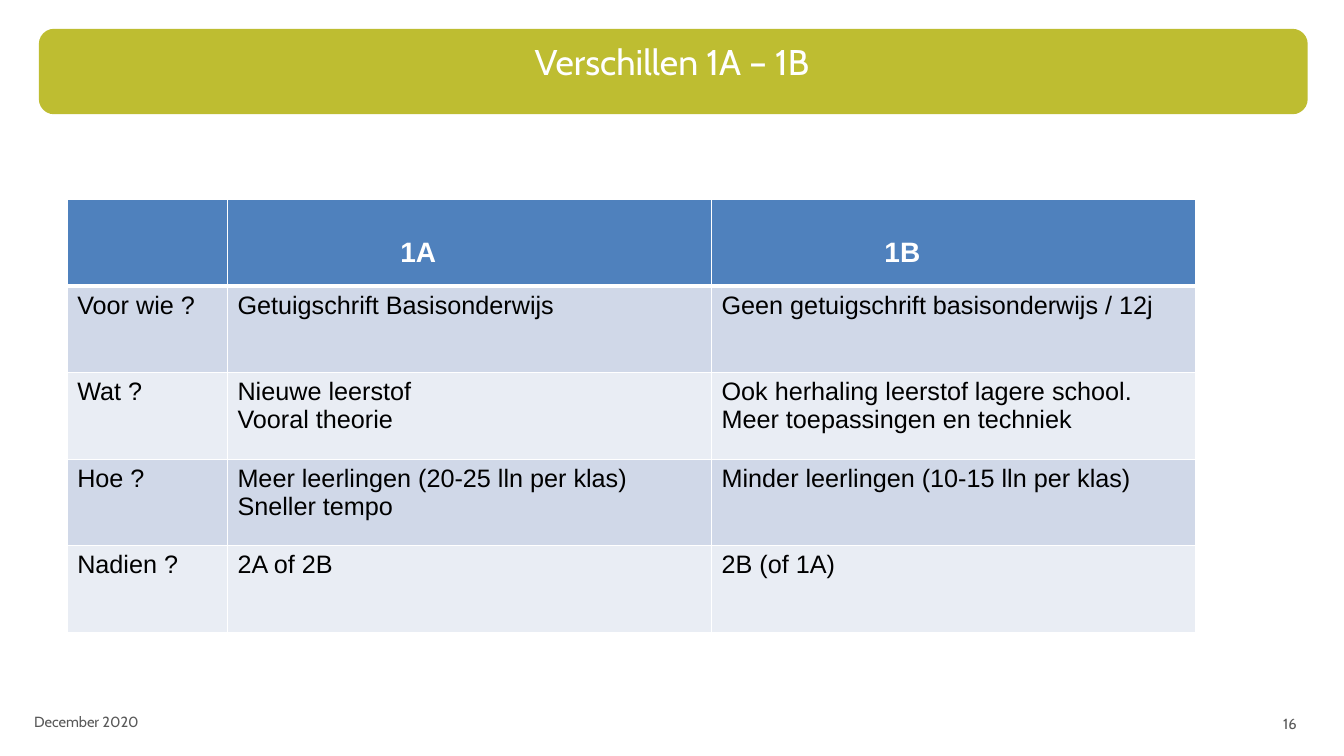
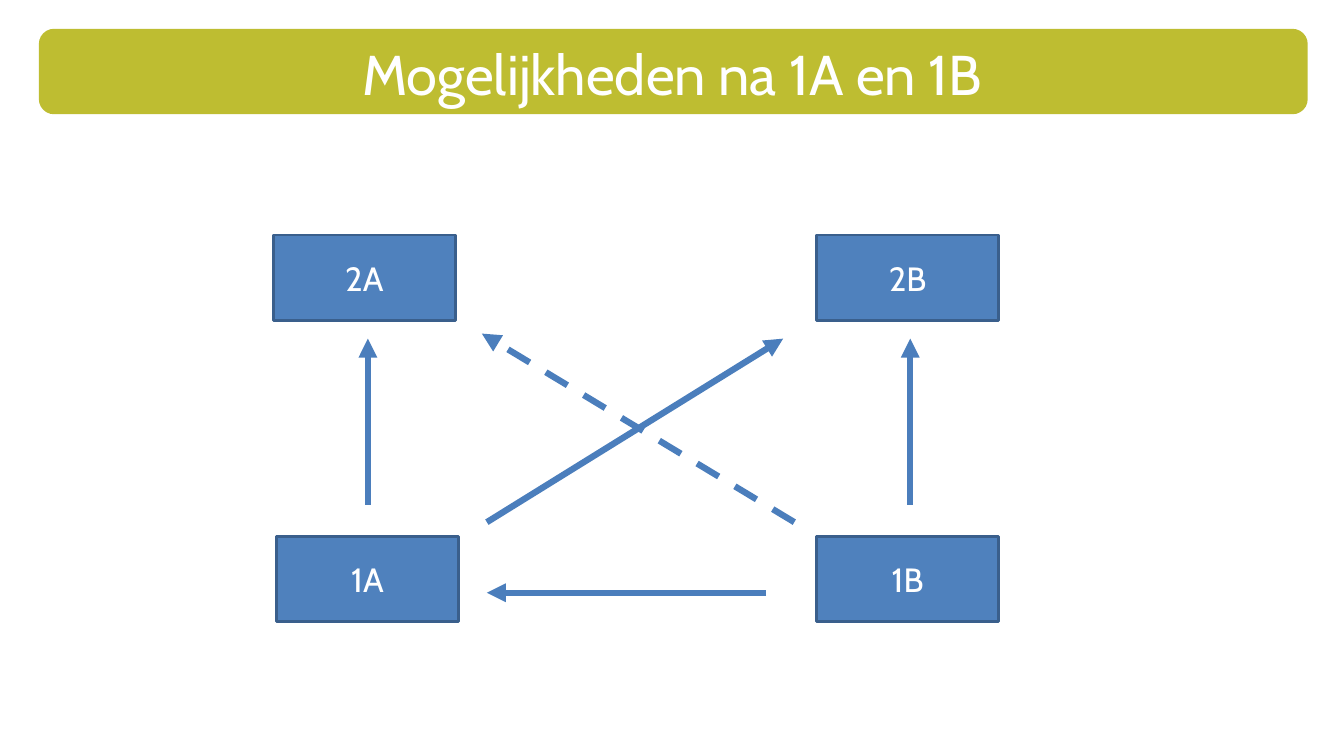
"""Build two slides that compare the school streams 1A and 1B."""
from dataclasses import dataclass

from lxml import etree
from pptx import Presentation
from pptx.dml.color import RGBColor
from pptx.enum.dml import MSO_LINE
from pptx.enum.shapes import MSO_CONNECTOR, MSO_SHAPE
from pptx.enum.text import MSO_ANCHOR, MSO_AUTO_SIZE, PP_ALIGN
from pptx.oxml.ns import qn
from pptx.util import Pt

LEFT, CENTER, RIGHT = PP_ALIGN.LEFT, PP_ALIGN.CENTER, PP_ALIGN.RIGHT
TOP, MIDDLE = MSO_ANCHOR.TOP, MSO_ANCHOR.MIDDLE
RECTANGLE, ROUNDED = MSO_SHAPE.RECTANGLE, MSO_SHAPE.ROUNDED_RECTANGLE
STRAIGHT, DASH = MSO_CONNECTOR.STRAIGHT, MSO_LINE.DASH
NO_AUTOFIT = MSO_AUTO_SIZE.NONE

OLIVE, BLUE, DARK_BLUE, ARROW_BLUE = "BEBD31", "4F81BD", "3A5F8C", "4B7EBC"
WHITE, BLACK, GRAY = "FFFFFF", "000000", "595959"
ROW_FILLS = ("D0D8E8", "E9EDF4")
HEADING_FONT, TABLE_FONT = "Cabin", "Arial"

TITLE_ONLY = 5
COLUMN_WIDTHS = (114.5, 345.8, 345.8)
ROW_HEIGHT = 61.8
TABLE_ROWS = (
    ("", "1A", "1B"),
    ("Voor wie ?", "Getuigschrift Basisonderwijs",
     "Geen getuigschrift basisonderwijs / 12j"),
    ("Wat ?", "Nieuwe leerstof\nVooral theorie",
     "Ook herhaling leerstof lagere school.\nMeer toepassingen en techniek"),
    ("Hoe ?", "Meer leerlingen (20-25 lln per klas)\nSneller tempo",
     "Minder leerlingen (10-15 lln per klas)"),
    ("Nadien ?", "2A of 2B", "2B (of 1A)"),
)


@dataclass(frozen=True)
class Box:
    """A frame in points."""
    left: float
    top: float
    width: float
    height: float

    def lengths(self):
        """Return the frame as lengths."""
        return tuple(Pt(v) for v in (self.left, self.top, self.width, self.height))


@dataclass(frozen=True)
class Stream:
    """A labelled year box in the diagram."""
    label: str
    left: float
    top: float


@dataclass(frozen=True)
class Arrow:
    """A transition between two streams."""
    start: tuple[float, float]
    end: tuple[float, float]
    dashed: bool = False


BAND = Box(28.8, 21.6, 904.3, 59)
TITLE = Box(48, 24.5, 864, 49.7)
DATE = Box(17.3, 501.1, 245.5, 28.8)
NUMBER = Box(711.4, 502.6, 221.8, 28.8)

STREAM_WIDTH, STREAM_HEIGHT = 130.3, 61.2
UPPER_TOP, LOWER_TOP, RIGHT_LEFT = 167.8, 383, 583.2
STREAMS = (
    Stream("1A", 197.3, LOWER_TOP),
    Stream("1B", RIGHT_LEFT, LOWER_TOP),
    Stream("2A", 195.1, UPPER_TOP),
    Stream("2B", RIGHT_LEFT, UPPER_TOP),
)
ARROWS = (
    Arrow((262.8, 360.7), (262.8, 241.9)),
    Arrow((650.2, 360.7), (650.2, 241.9)),
    Arrow((547.2, 423.4), (347.8, 423.4)),
    Arrow((347.8, 373), (559.4, 241.9)),
    Arrow((567.4, 373), (344.2, 238.3), dashed=True),
)


def color(value: str) -> RGBColor:
    """Return the colour for a hex string."""
    return RGBColor.from_string(value)


def write_text(frame, text: str, *, size: float, font: str = HEADING_FONT,
               ink: str = WHITE, bold: bool = False, align=LEFT) -> None:
    """Write one paragraph per line of text in one format."""
    frame.word_wrap = True
    for index, line in enumerate(text.split("\n")):
        paragraph = frame.add_paragraph() if index else frame.paragraphs[0]
        paragraph.text = line
        paragraph.alignment = align
        paragraph.font.size = Pt(size)
        paragraph.font.name = font
        paragraph.font.bold = bold
        paragraph.font.color.rgb = color(ink)


def add_box(slide, kind, box: Box, fill: str, outline: str):
    """Add a filled and outlined shape without shadow."""
    shape = slide.shapes.add_shape(kind, *box.lengths())
    shape.shadow.inherit = False
    shape.fill.solid()
    shape.fill.fore_color.rgb = color(fill)
    shape.line.color.rgb = color(outline)
    shape.line.width = Pt(2)
    return shape


def add_titled_slide(presentation, text: str, size: float):
    """Add a slide with its title on the olive band."""
    slide = presentation.slides.add_slide(presentation.slide_layouts[TITLE_ONLY])
    title = slide.shapes.title
    band = add_box(slide, ROUNDED, BAND, OLIVE, OLIVE)
    title._element.addprevious(band._element)
    title.left, title.top, title.width, title.height = TITLE.lengths()
    title.text_frame.auto_size = NO_AUTOFIT
    title.text_frame.vertical_anchor = TOP
    write_text(title.text_frame, text, size=size, align=CENTER)
    return slide


def add_footer(slide, box: Box, text: str, align) -> None:
    """Add a small gray footer text."""
    frame = slide.shapes.add_textbox(*box.lengths()).text_frame
    frame.vertical_anchor = MIDDLE
    write_text(frame, text, size=10.5, ink=GRAY, align=align)


def set_borders(cell, top: float, bottom: float) -> None:
    """Draw white borders around a cell."""
    properties = cell._tc.get_or_add_tcPr()
    widths = {"a:lnL": 1, "a:lnR": 1, "a:lnT": top, "a:lnB": bottom}
    for index, (tag, width) in enumerate(widths.items()):
        line = etree.Element(qn(tag), w=str(Pt(width)))
        fill = etree.SubElement(line, qn("a:solidFill"))
        etree.SubElement(fill, qn("a:srgbClr"), val=WHITE)
        properties.insert(index, line)


def add_comparison(slide) -> None:
    """Add the table that compares the streams."""
    frame = Box(48, 142.6, sum(COLUMN_WIDTHS), ROW_HEIGHT * len(TABLE_ROWS))
    table = slide.shapes.add_table(
        len(TABLE_ROWS), len(COLUMN_WIDTHS), *frame.lengths()).table
    for column, width in zip(table.columns, COLUMN_WIDTHS):
        column.width = Pt(width)
    for row_index, texts in enumerate(TABLE_ROWS):
        header = row_index == 0
        table.rows[row_index].height = Pt(ROW_HEIGHT)
        for column_index, text in enumerate(texts):
            cell = table.cell(row_index, column_index)
            cell.fill.solid()
            cell.fill.fore_color.rgb = color(
                BLUE if header else ROW_FILLS[(row_index - 1) % 2])
            set_borders(cell, 3 if row_index == 1 else 1, 3 if header else 1)
            if header and text:
                cell.margin_left, cell.margin_top = Pt(123.5), Pt(26.6)
            write_text(cell.text_frame, text, size=20 if header else 18,
                       font=TABLE_FONT, ink=WHITE if header else BLACK, bold=header)


def add_stream(slide, stream: Stream) -> None:
    """Add a stream box with its label."""
    box = Box(stream.left, stream.top, STREAM_WIDTH, STREAM_HEIGHT)
    frame = add_box(slide, RECTANGLE, box, BLUE, DARK_BLUE).text_frame
    frame.vertical_anchor = MIDDLE
    write_text(frame, stream.label, size=24, align=CENTER)


def add_arrow(slide, arrow: Arrow) -> None:
    """Add a transition arrow."""
    points = (Pt(value) for value in arrow.start + arrow.end)
    connector = slide.shapes.add_connector(STRAIGHT, *points)
    connector.line.color.rgb = color(ARROW_BLUE)
    connector.line.width = Pt(4.5)
    if arrow.dashed:
        connector.line.dash_style = DASH
    etree.SubElement(connector.line._get_or_add_ln(), qn("a:tailEnd"), type="triangle")
    etree.SubElement(connector._element.spPr, qn("a:effectLst"))


def main() -> None:
    """Build and save the presentation."""
    presentation = Presentation()
    presentation.slide_width, presentation.slide_height = Pt(960), Pt(540)

    differences = add_titled_slide(presentation, "Verschillen 1A – 1B", 25.5)
    add_footer(differences, DATE, "December 2020", LEFT)
    add_footer(differences, NUMBER, "16", RIGHT)
    add_comparison(differences)

    options = add_titled_slide(presentation, "Mogelijkheden na 1A en 1B", 40)
    for stream in STREAMS:
        add_stream(options, stream)
    for arrow in ARROWS:
        add_arrow(options, arrow)

    presentation.save("out.pptx")


if __name__ == "__main__":
    main()
